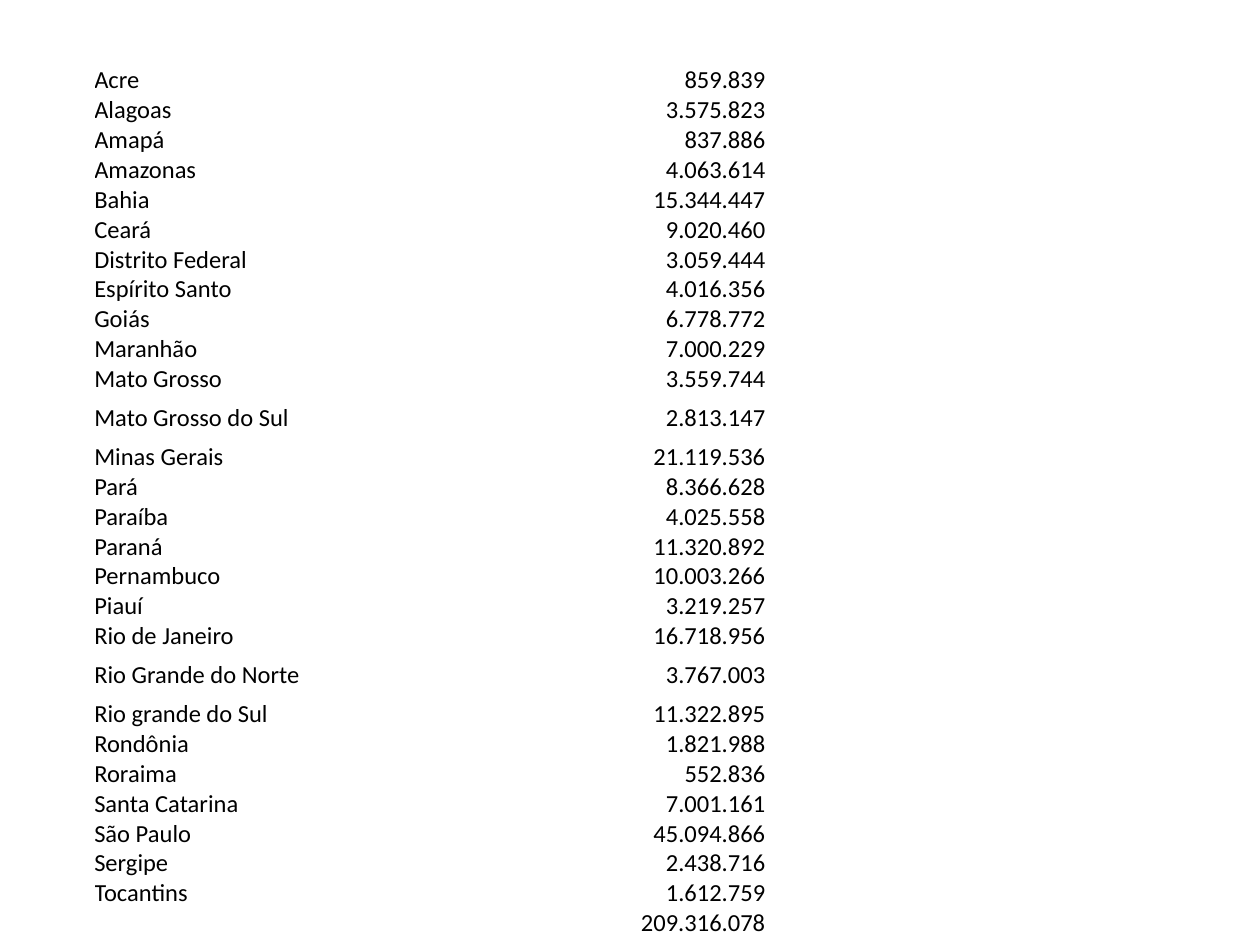
import lxml.etree
import pptx
import pptx.dml.color
import pptx.enum.text
import pptx.oxml.ns
import pptx.util
from pptx.util import Cm

FONT_SIZE = 14
ROW_HEIGHT = Cm(0.53)
TALL_ROW_HEIGHT = Cm(0.97)
TOTAL_ROW_HEIGHT = Cm(0.43)
NAME_COLUMN_SHARE = 0.55
TALL_ROWS = ("Mato Grosso do Sul", "Rio Grande do Norte")

POPULATIONS = [
    ("Acre", "859.839"),
    ("Alagoas", "3.575.823"),
    ("Amapá", "837.886"),
    ("Amazonas", "4.063.614"),
    ("Bahia", "15.344.447"),
    ("Ceará", "9.020.460"),
    ("Distrito Federal", "3.059.444"),
    ("Espírito Santo", "4.016.356"),
    ("Goiás", "6.778.772"),
    ("Maranhão", "7.000.229"),
    ("Mato Grosso", "3.559.744"),
    ("Mato Grosso do Sul", "2.813.147"),
    ("Minas Gerais", "21.119.536"),
    ("Pará", "8.366.628"),
    ("Paraíba", "4.025.558"),
    ("Paraná", "11.320.892"),
    ("Pernambuco", "10.003.266"),
    ("Piauí", "3.219.257"),
    ("Rio de Janeiro", "16.718.956"),
    ("Rio Grande do Norte", "3.767.003"),
    ("Rio grande do Sul", "11.322.895"),
    ("Rondônia", "1.821.988"),
    ("Roraima", "552.836"),
    ("Santa Catarina", "7.001.161"),
    ("São Paulo", "45.094.866"),
    ("Sergipe", "2.438.716"),
    ("Tocantins", "1.612.759"),
    ("", "209.316.078"),
]


def color(hex_string):
    return pptx.dml.color.RGBColor.from_string(hex_string)


def row_height(state):
    if not state:
        return TOTAL_ROW_HEIGHT
    return TALL_ROW_HEIGHT if state in TALL_ROWS else ROW_HEIGHT


def fill_cell(cell, text, alignment, anchor):
    cell.fill.background()
    cell.margin_left = cell.margin_right = cell.margin_top = cell.margin_bottom = 0
    cell.vertical_anchor = anchor
    paragraph = cell.text_frame.paragraphs[0]
    paragraph.alignment = alignment
    if not text:
        # The size of an empty paragraph keeps the row from growing.
        lxml.etree.SubElement(paragraph._p, pptx.oxml.ns.qn("a:endParaRPr"),
                              sz=str(FONT_SIZE * 100))
        return
    run = paragraph.add_run()
    run.text = text
    run.font.name = "Calibri"
    run.font.size = pptx.util.Pt(FONT_SIZE)
    run.font.color.rgb = color("000000")


def add_population_table(slide, left, top, width, height):
    frame = slide.shapes.add_table(len(POPULATIONS), 2, left, top, width, height)
    table = frame.table
    table.first_row = table.horz_banding = False
    name_width = int(width * NAME_COLUMN_SHARE)
    table.columns[0].width = name_width
    table.columns[1].width = width - name_width

    align = pptx.enum.text.PP_ALIGN
    anchors = pptx.enum.text.MSO_ANCHOR
    bottom_rows = (0, 1, 2, len(POPULATIONS) - 1)
    for index, (state, population) in enumerate(POPULATIONS):
        table.rows[index].height = row_height(state)
        number_anchor = anchors.BOTTOM if index in bottom_rows else anchors.MIDDLE
        fill_cell(table.cell(index, 0), state, align.LEFT, anchors.MIDDLE)
        fill_cell(table.cell(index, 1), population, align.RIGHT, number_anchor)
    frame.height = height


def main():
    presentation = pptx.Presentation()
    presentation.slide_width = Cm(25.4)
    presentation.slide_height = Cm(19.05)
    slide = presentation.slides.add_slide(presentation.slide_layouts[6])
    add_population_table(slide, Cm(1.9), Cm(1.32), Cm(13.53), Cm(17.32))
    presentation.save("out.pptx")


if __name__ == "__main__":
    main()
